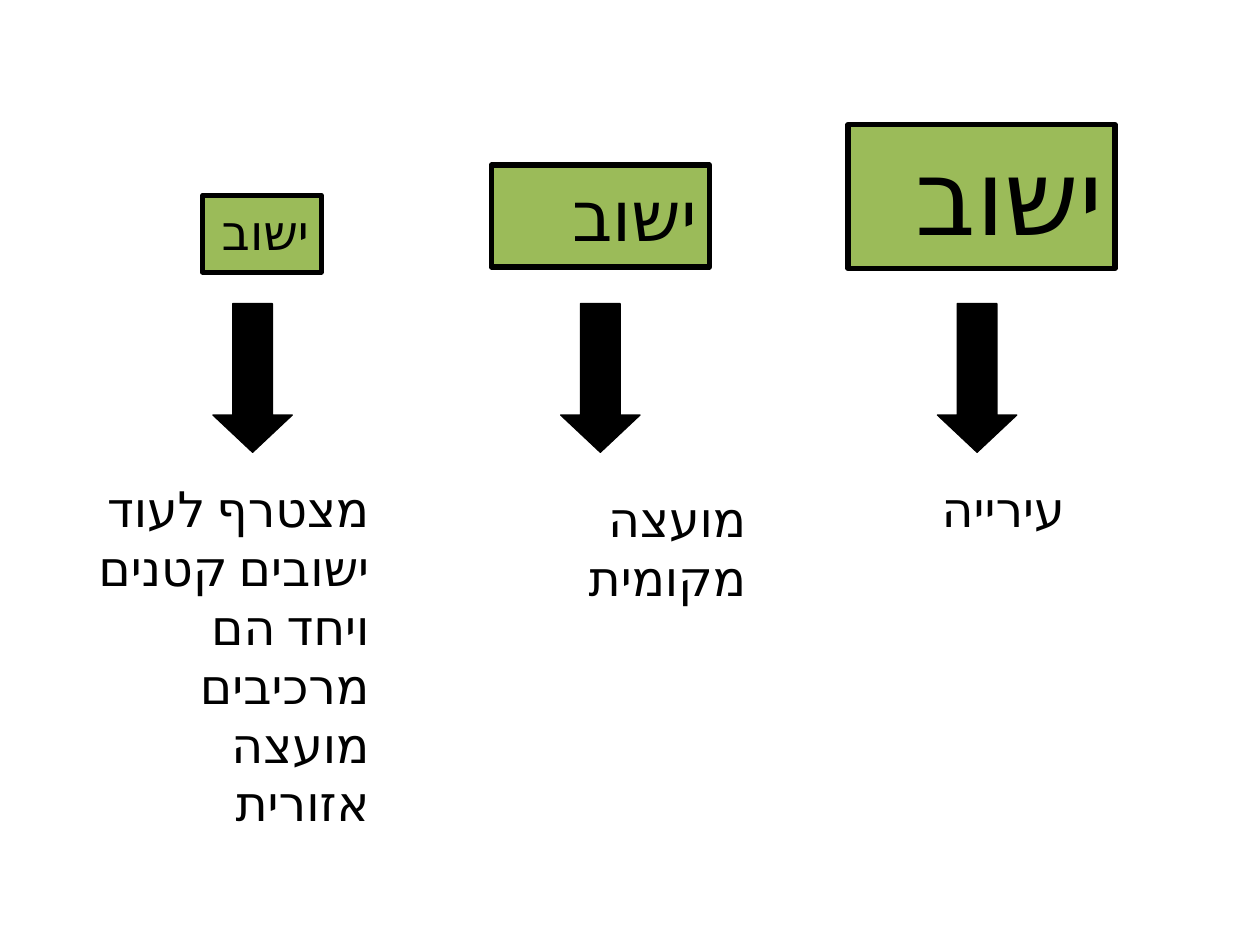
"""Build a slide showing how settlement size decides the type of local authority."""
import pptx
import pptx.dml.color
import pptx.enum.shapes
import pptx.enum.text
import pptx.oxml
import pptx.oxml.ns
import pptx.util

COLORS = {"settlement": "9BBB59", "ink": "000000"}
FONT = "Calibri"
SLIDE_WIDTH = pptx.util.Inches(10)
SLIDE_HEIGHT = pptx.util.Inches(7.5)
LABEL_SIZE = 28
ARROW_TOP, ARROW_WIDTH, ARROW_HEIGHT = 32.13, 6.3, 15.73
SETTLEMENTS = [
    {"box": (16.1, 20.67, 9.4, 8.13), "size": 28, "arrow_left": 16.9,
     "label": (6.7, 50, 23.6, 32.53),
     "authority": "מצטרף לעוד ישובים קטנים ויחד הם מרכיבים מועצה אזורית"},
    {"box": (39, 17.47, 17.3, 10.8), "size": 40, "arrow_left": 44.5,
     "label": (35.8, 51.07, 24.4, 7.6), "authority": "מועצה מקומית"},
    {"box": (67.3, 13.2, 21.2, 15.2), "size": 60, "arrow_left": 74.4,
     "label": (58.7, 50, 26.8, 7.6), "authority": "עירייה"},
]


def color(name):
    return pptx.dml.color.RGBColor.from_string(COLORS[name])


def place(left, top, width, height):
    """Turn percentages of the slide into lengths."""
    return [round(share * whole / 100) for share, whole in (
        (left, SLIDE_WIDTH), (top, SLIDE_HEIGHT),
        (width, SLIDE_WIDTH), (height, SLIDE_HEIGHT))]


def write_hebrew(shape, text, size):
    frame = shape.text_frame
    frame.word_wrap = True
    frame.auto_size = pptx.enum.text.MSO_AUTO_SIZE.SHAPE_TO_FIT_TEXT
    frame.vertical_anchor = pptx.enum.text.MSO_ANCHOR.TOP
    paragraph = frame.paragraphs[0]
    paragraph.alignment = pptx.enum.text.PP_ALIGN.RIGHT
    paragraph._p.get_or_add_pPr().set("rtl", "1")
    run = paragraph.add_run()
    run.text = text
    run.font.size = pptx.util.Pt(size)
    run.font.name = FONT
    run.font.color.rgb = color("ink")
    properties = run._r.get_or_add_rPr()
    properties.set("lang", "he-IL")
    complex_font = pptx.oxml.parse_xml(
        f'<a:cs {pptx.oxml.ns.nsdecls("a")} typeface="{FONT}"/>')
    properties.append(complex_font)


def add_filled_shape(slide, kind, area, fill, line_width):
    shape = slide.shapes.add_shape(kind, *place(*area))
    shape.shadow.inherit = False
    shape.fill.solid()
    shape.fill.fore_color.rgb = color(fill)
    shape.line.color.rgb = color("ink")
    shape.line.width = pptx.util.Pt(line_width)
    return shape


def add_settlement(slide, area, size):
    shape = add_filled_shape(
        slide, pptx.enum.shapes.MSO_SHAPE.RECTANGLE, area, "settlement", 3)
    write_hebrew(shape, "ישוב", size)


def add_arrow(slide, left):
    area = (left, ARROW_TOP, ARROW_WIDTH, ARROW_HEIGHT)
    shape = add_filled_shape(
        slide, pptx.enum.shapes.MSO_SHAPE.DOWN_ARROW, area, "ink", 0.75)
    shape.adjustments[0] = 0.5
    shape.adjustments[1] = 0.47


def add_label(slide, area, text):
    write_hebrew(slide.shapes.add_textbox(*place(*area)), text, LABEL_SIZE)


def main():
    presentation = pptx.Presentation()
    presentation.slide_width = SLIDE_WIDTH
    presentation.slide_height = SLIDE_HEIGHT
    slide = presentation.slides.add_slide(presentation.slide_layouts[6])
    for settlement in SETTLEMENTS:
        add_settlement(slide, settlement["box"], settlement["size"])
        add_arrow(slide, settlement["arrow_left"])
        add_label(slide, settlement["label"], settlement["authority"])
    presentation.save("out.pptx")


if __name__ == "__main__":
    main()
